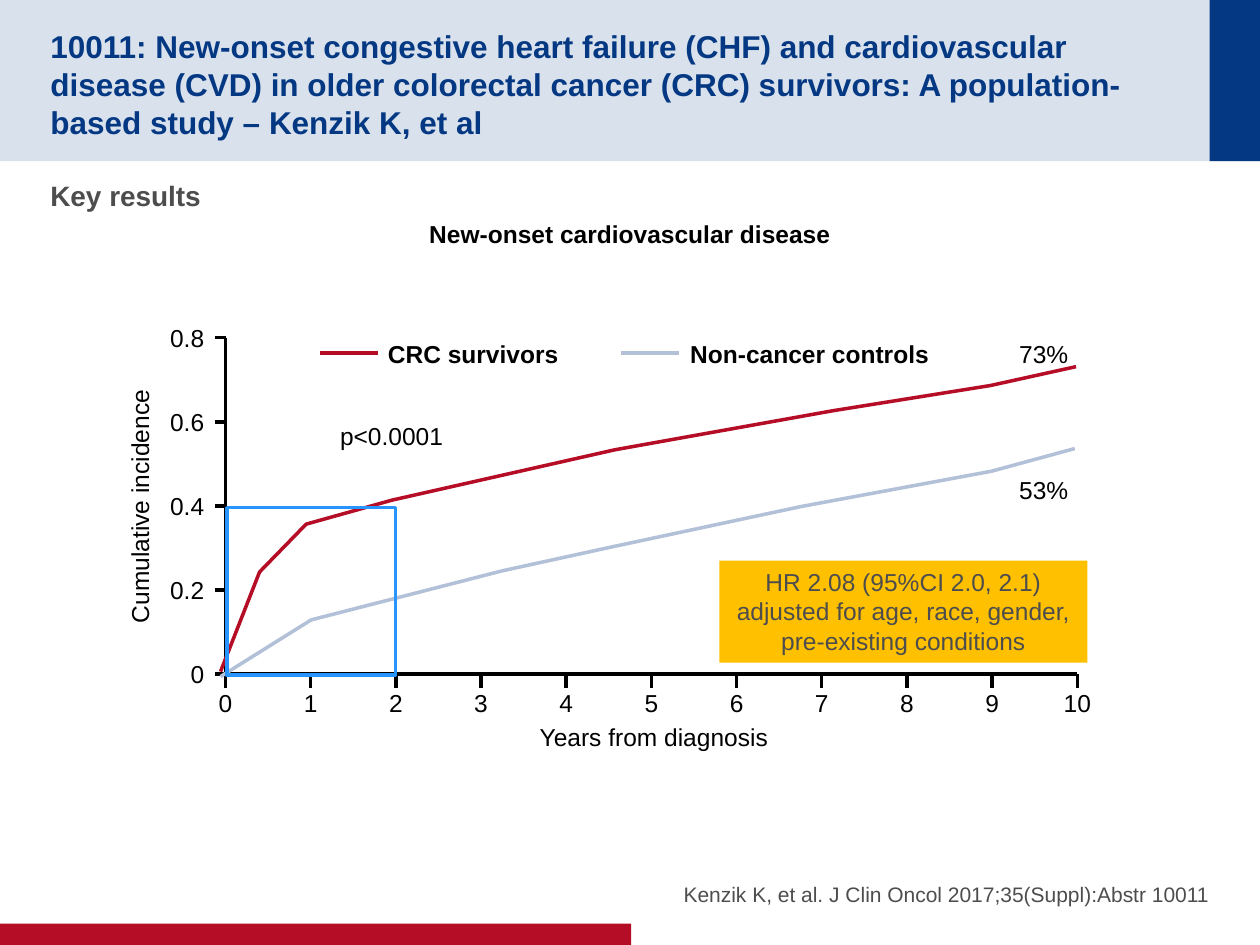
import pptx
import pptx.dml.color
import pptx.enum.shapes
import pptx.enum.text
import pptx.oxml
import pptx.util
from dataclasses import dataclass
from lxml import etree

Inches = pptx.util.Inches
Pt = pptx.util.Pt
ALIGN = pptx.enum.text.PP_ALIGN
ANCHOR = pptx.enum.text.MSO_ANCHOR
RECT = pptx.enum.shapes.MSO_SHAPE.RECTANGLE
STRAIGHT = pptx.enum.shapes.MSO_CONNECTOR.STRAIGHT
A = pptx.oxml.ns.nsuri("a")


@dataclass(frozen=True)
class Theme:
    font: str = "Arial"
    navy: str = "043882"
    red: str = "B60D27"
    pale_blue: str = "B2C0D8"
    bright_blue: str = "2894FF"
    amber: str = "FFC000"
    grey: str = "4D4D4D"
    black: str = "000000"
    title: float = 18
    heading: float = 16
    body: float = 14
    source: float = 12
    line: float = 2


class SlideBuilder:
    def __init__(self, slide, theme):
        self.slide = slide
        self.theme = theme

    def color(self, value):
        return pptx.dml.color.RGBColor.from_string(value)

    def stroke(self, sp, color):
        sp.line.color.rgb = self.color(color)
        sp.line.width = Pt(self.theme.line)

    def set_text(self, sp, text, size=None, color=None, bold=False, align=ALIGN.LEFT,
                 anchor=ANCHOR.TOP, insets=(0.1, 0.05, 0.1, 0.05), wrap=False, after=0):
        tf = sp.text_frame
        tf.text = text
        tf.word_wrap = wrap
        tf.vertical_anchor = anchor
        tf.margin_left, tf.margin_top, tf.margin_right, tf.margin_bottom = map(Inches, insets)
        for p in tf.paragraphs:
            p.alignment = align
            p.space_after = Pt(after)
            for r in p.runs:
                r.font.name = self.theme.font
                r.font.size = Pt(size or self.theme.body)
                r.font.bold = bold
                r.font.color.rgb = self.color(color or self.theme.black)

    def text(self, x, y, w, h, text, rotation=0, **style):
        sp = self.slide.shapes.add_textbox(Inches(x), Inches(y), Inches(w), Inches(h))
        sp.rotation = rotation
        self.set_text(sp, text, **style)

    def rect(self, x, y, w, h, fill=None, outline=None, alpha=None):
        sp = self.slide.shapes.add_shape(RECT, Inches(x), Inches(y), Inches(w), Inches(h))
        sp.shadow.inherit = False
        if fill:
            sp.fill.solid()
            sp.fill.fore_color.rgb = self.color(fill)
        else:
            sp.fill.background()
        if alpha:
            clr = sp._element.spPr.find(f"{{{A}}}solidFill/{{{A}}}srgbClr")
            etree.SubElement(clr, f"{{{A}}}alpha", val=str(alpha * 1000))
        if outline:
            self.stroke(sp, outline)
        else:
            sp.line.fill.background()
        return sp

    def line(self, x1, y1, x2, y2, color):
        sp = self.slide.shapes.add_connector(STRAIGHT, *map(Inches, (x1, y1, x2, y2)))
        self.stroke(sp, color)
        etree.SubElement(sp._element.spPr, f"{{{A}}}effectLst")

    def polyline(self, points, color):
        start, *rest = [(Inches(x), Inches(y)) for x, y in points]
        builder = self.slide.shapes.build_freeform(*start)
        builder.add_line_segments(rest, close=False)
        sp = builder.convert_to_shape()
        sp.shadow.inherit = False
        sp.fill.background()
        self.stroke(sp, color)


def main():
    prs = pptx.Presentation()
    prs.slide_width, prs.slide_height = Inches(10), Inches(7.5)
    t = Theme()
    s = SlideBuilder(prs.slides.add_slide(prs.slide_layouts[6]), t)

    # Header band and footer bar
    s.rect(0, 0, 10, 1.28, t.navy, alpha=15)
    s.rect(9.6, 0, 0.4, 1.28, t.navy)
    s.rect(0, 7.33, 5.01, 0.17, t.red)

    # Title, source and headings
    s.text(0.4, 0.2, 9.01, 0.88,
           "10011: New-onset congestive heart failure (CHF) and cardiovascular disease (CVD) "
           "in older colorectal cancer (CRC) survivors: A population-based study – Kenzik K, et al",
           size=t.title, color=t.navy, bold=True, anchor=ANCHOR.MIDDLE,
           insets=(0, 0.05, 0, 0), wrap=True)
    s.text(4.92, 6.67, 4.68, 0.53, "Kenzik K, et al. J Clin Oncol 2017;35(Suppl):Abstr 10011",
           size=t.source, color=t.grey, align=ALIGN.RIGHT, anchor=ANCHOR.BOTTOM,
           insets=(0, 0, 0, 0), wrap=True, after=4)
    s.text(0.4, 1.37, 9.2, 0.55, "Key results", size=t.heading, color=t.grey, bold=True,
           insets=(0, 0.05, 0, 0.05), wrap=True, after=4)
    s.text(1.03, 1.69, 7.94, 0.34, "New-onset cardiovascular disease", bold=True,
           align=ALIGN.CENTER, wrap=True)

    # Axes with evenly spaced ticks and labels
    left, right, top, bottom = 1.79, 8.55, 2.68, 5.35
    label_h = 0.34
    s.polyline([(left, top), (left, bottom), (right, bottom)], t.black)
    y_labels = ["0.8", "0.6", "0.4", "0.2", "0"]
    for i, label in enumerate(y_labels):
        y = top + i * (bottom - top) / (len(y_labels) - 1)
        w = 0.47 if len(label) > 1 else 0.31
        s.line(left - 0.08, y, left, y, t.black)
        s.text(1.72 - w, y - label_h / 2, w, label_h, label,
               align=ALIGN.RIGHT, anchor=ANCHOR.MIDDLE)
    for year in range(11):
        x = left + year * (right - left) / 10
        w = 0.42 if year == 10 else 0.31
        s.line(x, bottom, x, bottom + 0.11, t.black)
        s.text(x - w / 2, 5.41, w, label_h, str(year), align=ALIGN.CENTER)
    s.text(0.08, 3.85, 2.06, label_h, "Cumulative incidence", rotation=270, align=ALIGN.CENTER)
    s.text(4.18, 5.68, 2.02, label_h, "Years from diagnosis", align=ALIGN.CENTER)

    # Legend
    for x, text_x, w, label, color in (
        (2.54, 2.98, 1.56, "CRC survivors", t.red),
        (4.93, 5.38, 2.1, "Non-cancer controls", t.pale_blue),
    ):
        s.line(x, 2.8, x + 0.46, 2.8, color)
        s.text(text_x, 2.64, w, label_h, label, bold=True)

    # Annotations
    for x, y, w, label in ((2.6, 3.29, 1.02, "p<0.0001"),
                           (7.99, 2.64, 0.59, "73%"),
                           (7.99, 3.72, 0.59, "53%")):
        s.text(x, y, w, label_h, label)
    hazard_box = s.rect(5.71, 4.45, 2.92, 0.81, t.amber)
    s.set_text(hazard_box, "HR 2.08 (95%CI 2.0, 2.1)\n"
               "adjusted for age, race, gender,\vpre-existing conditions",
               color=t.grey, align=ALIGN.CENTER)

    # Incidence curves and the highlighted first two years
    s.polyline([(1.75, 5.33), (2.06, 4.54), (2.43, 4.16), (3.11, 3.97),
                (4.88, 3.57), (6.61, 3.26), (7.86, 3.06), (8.54, 2.91)], t.red)
    s.polyline([(8.53, 3.56), (7.87, 3.74), (6.36, 4.02), (4.86, 4.34),
                (3.99, 4.53), (2.47, 4.92), (1.75, 5.37)], t.pale_blue)
    s.rect(1.8, 4.03, 1.34, 1.33, outline=t.bright_blue)

    prs.save("out.pptx")


if __name__ == "__main__":
    main()
